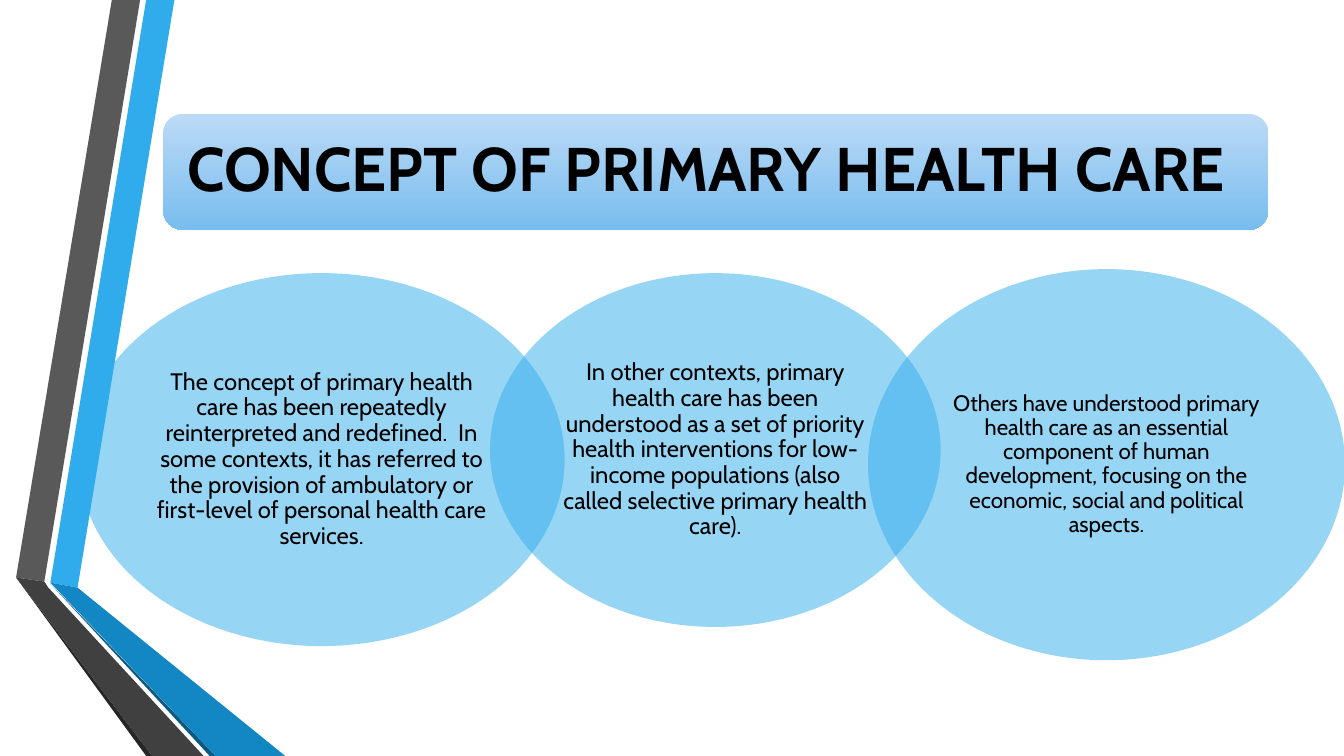
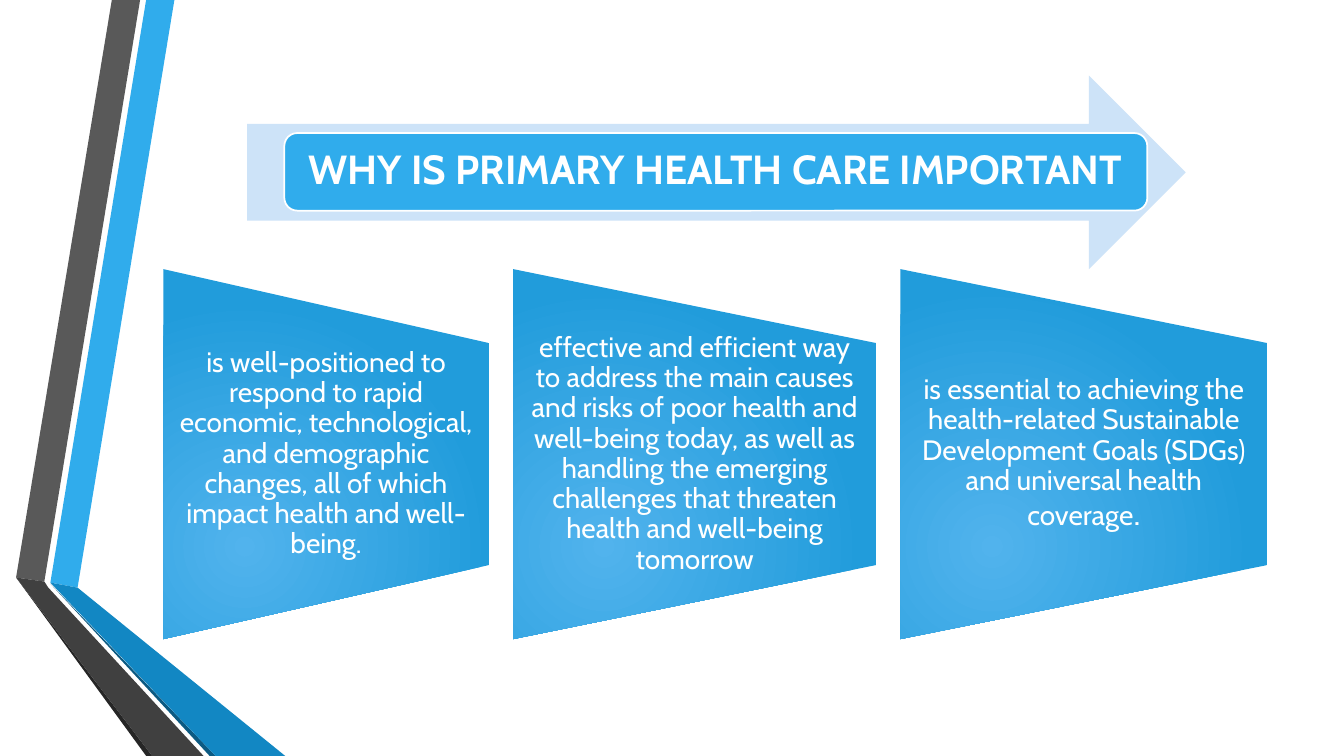
import pptx
import pptx.util
from lxml import etree
from pptx.dml.color import RGBColor
from pptx.enum.shapes import MSO_SHAPE
from pptx.enum.text import MSO_ANCHOR, PP_ALIGN
from pptx.oxml.ns import qn
from pptx.util import Inches


class Theme:
    font = "Cabin"
    black = "000000"
    white = "FFFFFF"
    blue = "30ACEC"
    arrow = "CDE3F8"
    title_gradient = ("BCDAF6", "78BDEF")
    card_gradient = ("51B3ED", "219CDB")
    concept_title = 44
    reason_title = 29
    reason = 20
    reason_stop = 24


# Colour and corner points of each piece of the folded ribbon at the left
RIBBONS = [
    (Theme.blue, [(0.5, 5.78), (0.77, 5.83), (1.73, 0), (1.45, 0)]),
    ("595959", [(1.39, 0), (1.11, 0), (0.16, 5.73), (0.44, 5.77)]),
    ("262626", [(0.16, 5.73), (1.45, 7.5), (1.51, 7.5)]),
    ("0C5A82", [(0.5, 5.79), (2.08, 7.5), (2.14, 7.5)]),
    ("1287C3", [(0.5, 5.78), (2.14, 7.5), (2.83, 7.5), (0.77, 5.83)]),
    ("404040", [(2.02, 7.5), (0.48, 5.83), (0.44, 5.77), (0.16, 5.73), (1.51, 7.5)]),
]

CONCEPT_TITLE = "CONCEPT OF PRIMARY HEALTH CARE"
# Left, top, width, height, type size, text
CONCEPTS = [
    (0.78, 2.71, 4.82, 3.7, 17,
     "The concept of primary health care has been repeatedly reinterpreted and "
     "redefined.  In some contexts, it has referred to the provision of ambulatory "
     "or first-level of personal health care services."),
    (4.86, 2.71, 4.47, 3.51, 17,
     "In other contexts, primary health care has been understood as a set of priority "
     "health interventions for low-income populations (also called selective primary "
     "health care)."),
    (8.61, 2.67, 4.73, 3.88, 16,
     "Others have understood primary health care as an essential component of human "
     "development, focusing on the economic, social and political aspects."),
]

REASON_TITLE = "WHY IS PRIMARY HEALTH CARE IMPORTANT"
# Width and text runs with their type sizes
REASONS = [
    (3.23, [("is well-positioned to respond to rapid economic, technological, and "
             "demographic changes, all of which impact health and well-being.",
             Theme.reason)]),
    (3.6, [("effective and efficient way to address the main causes and risks of poor "
            "health and well-being today, as well as handling the emerging challenges "
            "that threaten health and well-being tomorrow", Theme.reason)]),
    (3.64, [("is essential to achieving the health-related Sustainable Development "
             "Goals (SDGs) and universal health coverage", Theme.reason),
            (".", Theme.reason_stop)]),
]
REASON_LEFT, REASON_TOP, REASON_HEIGHT, REASON_GAP = 1.62, 2.67, 3.67, 0.24


def paint(shape, color, alpha=None):
    shape.shadow.inherit = False
    shape.line.fill.background()
    shape.fill.solid()
    shape.fill.fore_color.rgb = RGBColor.from_string(color)
    if alpha is not None:
        tint = shape.element.spPr.find(".//" + qn("a:srgbClr"))
        etree.SubElement(tint, qn("a:alpha"), val=str(alpha * 1000))


def paint_gradient(shape, colors, center=None):
    """Shade downwards, or outwards from the given fill-to rectangle."""
    shape.shadow.inherit = False
    shape.line.fill.background()
    shape.fill.gradient()
    shape.fill.gradient_angle = 270
    for stop, color in zip(shape.fill.gradient_stops, colors):
        stop.color.rgb = RGBColor.from_string(color)
    if center:
        gradient = shape.element.spPr.find(qn("a:gradFill"))
        circle = etree.Element(qn("a:path"), path="circle")
        edges = {side: str(value * 1000) for side, value in zip("ltrb", center)}
        etree.SubElement(circle, qn("a:fillToRect"), edges)
        gradient.replace(gradient.find(qn("a:lin")), circle)


def add_preset(page, kind, left, top, width, height):
    return page.shapes.add_shape(
        kind, Inches(left), Inches(top), Inches(width), Inches(height))


def add_outline(page, points):
    corners = [(Inches(x), Inches(y)) for x, y in points]
    builder = page.shapes.build_freeform(*corners[0])
    builder.add_line_segments(corners[1:], close=True)
    return builder.convert_to_shape()


def write(shape, runs, color=Theme.black, bold=False, align=PP_ALIGN.CENTER,
          inset_x=0.07, inset_y=0.07):
    frame = shape.text_frame
    frame.word_wrap = True
    frame.vertical_anchor = MSO_ANCHOR.MIDDLE
    frame.margin_left = frame.margin_right = Inches(inset_x)
    frame.margin_top = frame.margin_bottom = Inches(inset_y)
    para = frame.paragraphs[0]
    para.alignment = align
    para.line_spacing = 0.9
    for text, size in runs:
        span = para.add_run()
        span.text = text
        span.font.name = Theme.font
        span.font.size = pptx.util.Pt(size)
        span.font.bold = bold
        span.font.color.rgb = RGBColor.from_string(color)


def add_ribbons_to_layout(page):
    """Build the ribbon on a page, then hand it to the layout all pages share."""
    for color, points in RIBBONS:
        ribbon = add_outline(page, points)
        paint(ribbon, color)
        page.slide_layout.shapes.element.append(ribbon.element)


def build_concept_page(page):
    title = add_preset(page, MSO_SHAPE.ROUNDED_RECTANGLE, 1.62, 1.13, 10.96, 1.15)
    paint_gradient(title, Theme.title_gradient)
    write(title, [(CONCEPT_TITLE, Theme.concept_title)], bold=True,
          align=PP_ALIGN.LEFT, inset_x=0.18, inset_y=0.18)
    for left, top, width, height, size, text in CONCEPTS:
        circle = add_preset(page, MSO_SHAPE.OVAL, left, top, width, height)
        paint(circle, Theme.blue, alpha=50)
        write(circle, [(text, size)])


def build_reason_page(page):
    arrow = add_preset(page, MSO_SHAPE.RIGHT_ARROW, 2.45, 0.75, 9.31, 1.92)
    paint(arrow, Theme.arrow)
    title = add_preset(page, MSO_SHAPE.ROUNDED_RECTANGLE, 2.82, 1.32, 8.56, 0.77)
    paint(title, Theme.blue)
    title.line.color.rgb = RGBColor.from_string(Theme.white)
    title.line.width = pptx.util.Pt(1.25)
    write(title, [(REASON_TITLE, Theme.reason_title)], color=Theme.white, bold=True,
          inset_x=0.12, inset_y=0.12)

    left, bottom, slope = REASON_LEFT, REASON_TOP + REASON_HEIGHT, REASON_HEIGHT / 5
    for width, runs in REASONS:
        right = left + width
        card = add_outline(page, [(left, REASON_TOP), (right, REASON_TOP + slope),
                                  (right, bottom - slope), (left, bottom)])
        paint_gradient(card, Theme.card_gradient, center=(50, 100, 100, 50))
        write(card, runs, color=Theme.white, inset_x=0.14, inset_y=0)
        left = right + REASON_GAP


def main():
    deck = pptx.Presentation()
    deck.slide_width, deck.slide_height = Inches(13.33), Inches(7.5)
    blank = deck.slide_layouts[6]
    concept_page, reason_page = (deck.slides.add_slide(blank) for _ in range(2))
    add_ribbons_to_layout(concept_page)
    build_concept_page(concept_page)
    build_reason_page(reason_page)
    deck.save("out.pptx")


if __name__ == "__main__":
    main()
